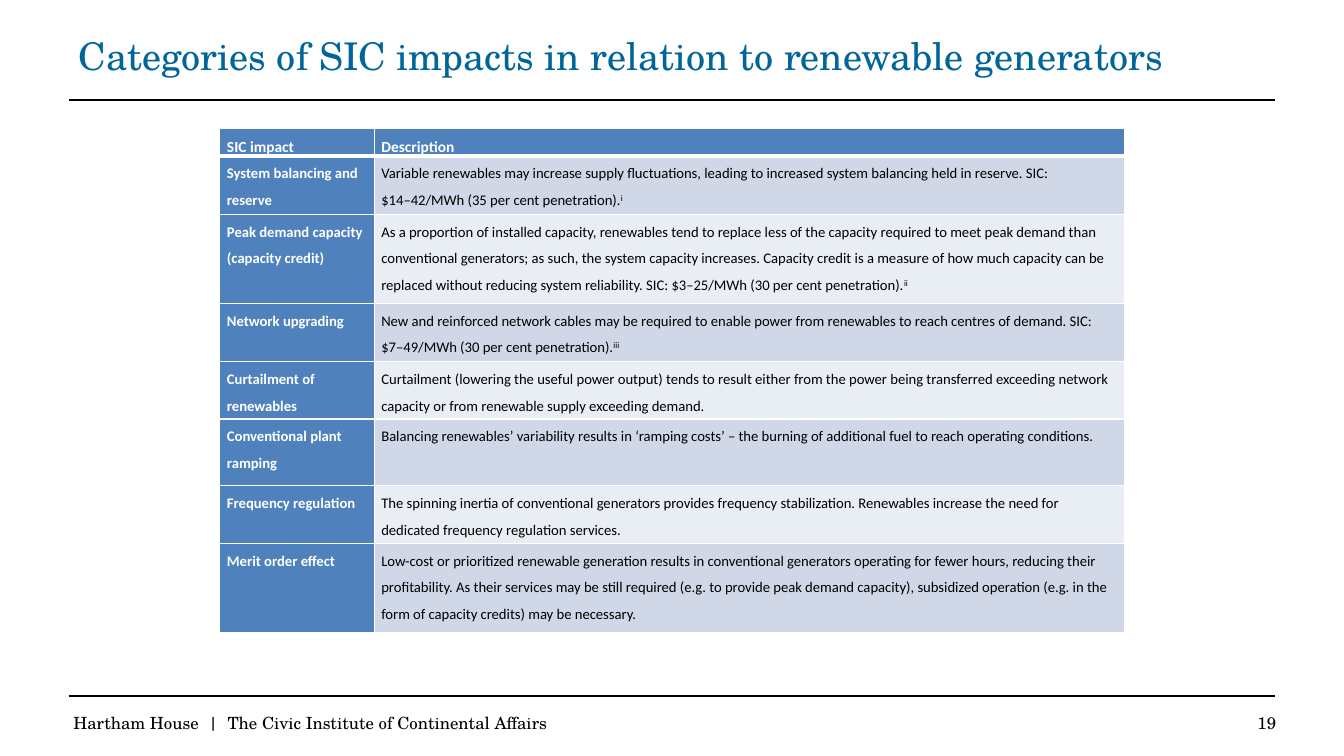
from dataclasses import dataclass

from lxml import etree
from pptx import Presentation
from pptx import util as u
from pptx.dml.color import RGBColor
from pptx.enum import shapes, text
from pptx.oxml import ns

COLOURS = {
    "ink": "000000",
    "paper": "FFFFFF",
    "title": "006699",
    "heading": "4F81BD",
    "odd": "D0D8E8",
    "even": "E9EDF4",
}
SERIF, SANS = "TeX Gyre Schola", "Calibri"
RULE_LEFT, RULE_RIGHT = 1.73, 32.13


@dataclass
class Impact:
    name: str
    description: str
    height: float
    note: str = ""
    spaced: bool = False


@dataclass
class Label:
    words: str
    left: float
    top: float
    width: float
    height: float
    size: float = 12
    colour: str = "ink"
    align: text.PP_ALIGN = text.PP_ALIGN.LEFT
    anchor: text.MSO_ANCHOR = text.MSO_ANCHOR.MIDDLE
    spacing: float = 1.0


IMPACTS = [
    Impact("System balancing and reserve",
           "Variable renewables may increase supply fluctuations, leading to increased system "
           "balancing held in reserve. SIC: $14–42/MWh (35 per cent penetration).", 1.47, "i"),
    Impact("Peak demand capacity (capacity credit)",
           "As a proportion of installed capacity, renewables tend to replace less of the capacity "
           "required to meet peak demand than conventional generators; as such, the system capacity "
           "increases. Capacity credit is a measure of how much capacity can be replaced without "
           "reducing system reliability. SIC: $3–25/MWh (30 per cent penetration).", 2.24, "ii"),
    Impact("Network upgrading",
           "New and reinforced network cables may be required to enable power from renewables to "
           "reach centres of demand. SIC: $7–49/MWh (30 per cent penetration).", 1.47, "iii"),
    Impact("Curtailment of renewables",
           "Curtailment (lowering the useful power output) tends to result either from the power "
           "being transferred exceeding network capacity or from renewable supply exceeding demand.",
           1.45),
    Impact("Conventional plant ramping",
           "Balancing renewables’ variability results in ‘ramping costs’ – the burning of additional "
           "fuel to reach operating conditions.", 1.68),
    Impact("Frequency regulation",
           "The spinning inertia of conventional generators provides frequency stabilization. "
           "Renewables increase the need for dedicated frequency regulation services.", 1.45),
    Impact("Merit order effect",
           "Low-cost or prioritized renewable generation results in conventional generators operating "
           "for fewer hours, reducing their profitability. As their services may be still required "
           "(e.g. to provide peak demand capacity), subsidized operation (e.g. in the form of capacity "
           "credits) may be necessary.", 2.26, spaced=True),
]

LABELS = [
    Label("Categories of SIC impacts in relation to renewable generators", 1.73, 0.91, 30.4, 1.19,
          size=27.2, colour="title", anchor=text.MSO_ANCHOR.TOP, spacing=0.8),
    Label("Hartham House  |  The Civic Institute of Continental Affairs", 1.6, 17.73, 29.34, 0.99),
    Label("19", 31.06, 17.73, 1.35, 0.99, align=text.PP_ALIGN.RIGHT),
]


def colour(name: str) -> RGBColor:
    return RGBColor.from_string(COLOURS[name])


def write(paragraph, words: str, *, size: float, font: str = SANS, ink: str = "ink",
          bold: bool = False, raised: bool = False, spacing: float = 1.5,
          spaced: bool = False, align=text.PP_ALIGN.LEFT) -> None:
    """Append one formatted run and set the paragraph's layout."""
    paragraph.alignment = align
    paragraph.line_spacing = spacing
    if spaced:
        paragraph.space_before, paragraph.space_after = u.Pt(10), u.Pt(8)
    run = paragraph.add_run()
    run.text = words
    run.font.name, run.font.size, run.font.bold = font, u.Pt(size), bold
    run.font.color.rgb = colour(ink)
    if raised:
        run.font._element.set("baseline", "30000")


def add_label(slide, label: Label) -> None:
    frame = slide.shapes.add_textbox(u.Cm(label.left), u.Cm(label.top),
                                     u.Cm(label.width), u.Cm(label.height)).text_frame
    frame.word_wrap = True
    frame.vertical_anchor = label.anchor
    write(frame.paragraphs[0], label.words, size=label.size, font=SERIF, ink=label.colour,
          spacing=label.spacing, align=label.align)


def add_rule(slide, y: float) -> None:
    rule = slide.shapes.add_connector(shapes.MSO_CONNECTOR.STRAIGHT, u.Cm(RULE_LEFT), u.Cm(y),
                                      u.Cm(RULE_RIGHT), u.Cm(y))
    rule.line.color.rgb = colour("ink")
    rule.line.width = u.Pt(1.5)
    etree.SubElement(rule._element.spPr, ns.qn("a:effectLst"))


def style_cell(cell, fill: str, top: float = 1, bottom: float = 1) -> None:
    """Set margins, fill and white borders; top and bottom are widths in points."""
    cell.margin_left = cell.margin_right = u.Cm(0.18)
    cell.margin_top = cell.margin_bottom = 0
    cell.fill.solid()
    cell.fill.fore_color.rgb = colour(fill)
    properties = cell._tc.get_or_add_tcPr()
    widths = {"lnL": 1, "lnR": 1, "lnT": top, "lnB": bottom}
    for position, (side, width) in enumerate(widths.items()):
        border = etree.Element(ns.qn(f"a:{side}"), w=str(u.Pt(width)))
        paint = etree.SubElement(border, ns.qn("a:solidFill"))
        etree.SubElement(paint, ns.qn("a:srgbClr"), val=COLOURS["paper"])
        properties.insert(position, border)


def add_impact_table(slide) -> None:
    widths = [3.89, 18.92]
    heights = [0.58] + [impact.height for impact in IMPACTS]
    table = slide.shapes.add_table(len(heights), len(widths), u.Cm(5.54), u.Cm(3.23),
                                   u.Cm(sum(widths)), u.Cm(sum(heights))).table
    for column, width in zip(table.columns, widths):
        column.width = u.Cm(width)
    for row, height in zip(table.rows, heights):
        row.height = u.Cm(height)

    for column, heading in enumerate(["SIC impact", "Description"]):
        cell = table.cell(0, column)
        style_cell(cell, "heading", bottom=3)
        write(cell.text_frame.paragraphs[0], heading, size=11, ink="paper", bold=True)

    for row, impact in enumerate(IMPACTS, start=1):
        name, description = table.cell(row, 0), table.cell(row, 1)
        top = 3 if row == 1 else 1
        style_cell(name, "heading", top=top)
        style_cell(description, "odd" if row % 2 else "even", top=top)
        write(name.text_frame.paragraphs[0], impact.name, size=10.5, ink="paper", bold=True,
              spaced=True)
        paragraph = description.text_frame.paragraphs[0]
        write(paragraph, impact.description, size=10.5, spaced=impact.spaced)
        if impact.note:
            write(paragraph, impact.note, size=10.5, raised=True)


def main() -> None:
    deck = Presentation()
    deck.slide_width, deck.slide_height = u.Cm(33.87), u.Cm(19.05)
    slide = deck.slides.add_slide(deck.slide_layouts[6])
    for y in (2.51, 17.53):
        add_rule(slide, y)
    for label in LABELS:
        add_label(slide, label)
    add_impact_table(slide)
    deck.save("out.pptx")


if __name__ == "__main__":
    main()
